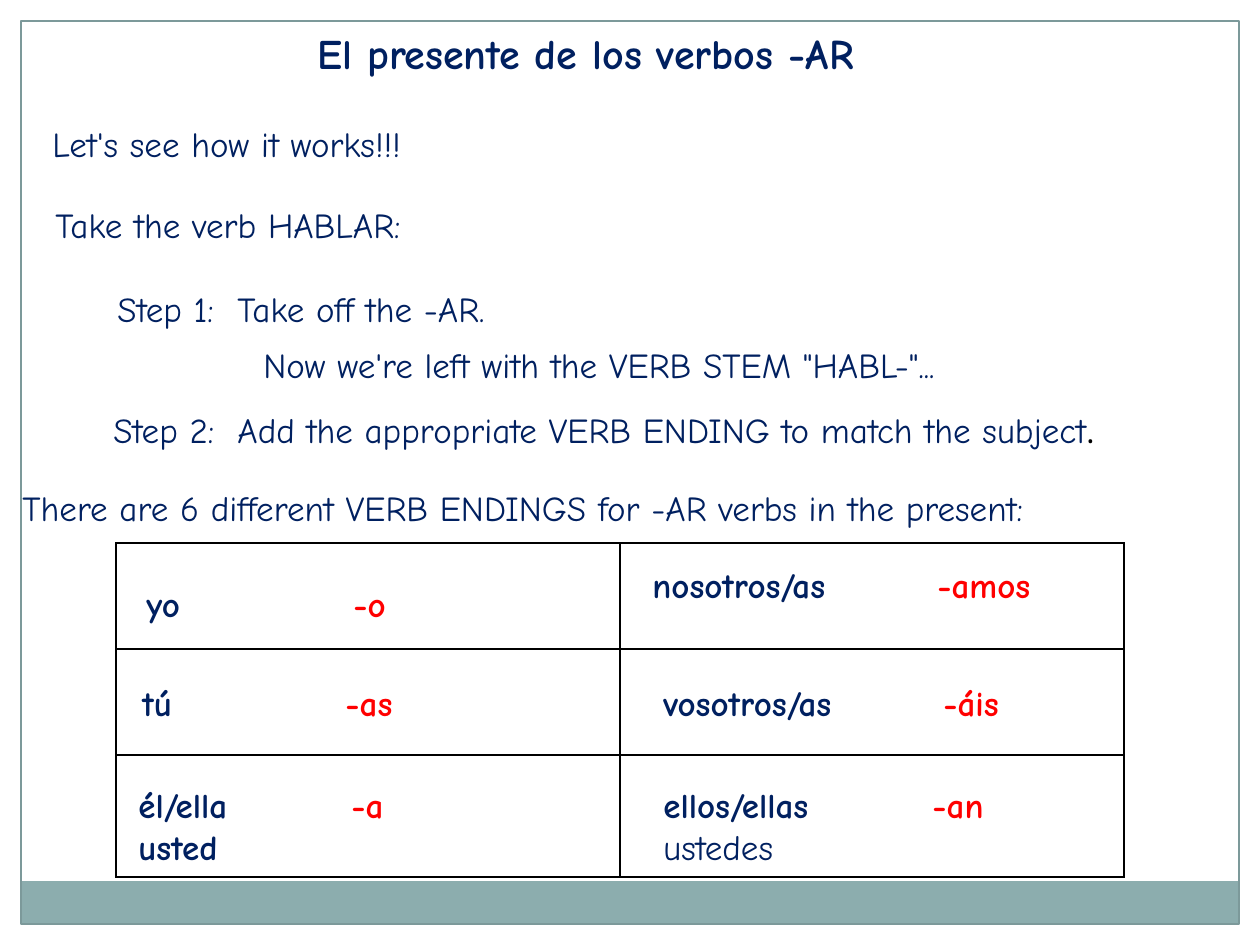
import pptx
import pptx.dml.color
import pptx.enum.shapes
import pptx.enum.text
import pptx.oxml
import pptx.oxml.ns
import pptx.util
from lxml import etree

EMU_PER_PX = 914400 / 126
INSET = 13
COLORS = {
    "white": "FFFFFF",
    "band": "8CADAE",
    "frame": "7C999A",
    "navy": "002060",
    "red": "FF0000",
    "black": "000000",
}


def px(n):
    return pptx.util.Emu(round(n * EMU_PER_PX))


def rgb(name):
    return pptx.dml.color.RGBColor.from_string(COLORS[name])


def add_run(p, text, size=20, color="navy", bold=False, font="Comic Neue"):
    r = p.add_run()
    r.text = text
    r.font.size = pptx.util.Pt(size)
    r.font.bold = bold
    r.font.name = font
    r.font.color.rgb = rgb(color)
    return r


class Deck:
    def __init__(self, width, height):
        self.prs = pptx.Presentation()
        self.prs.slide_width = px(width)
        self.prs.slide_height = px(height)
        self.slide = self.prs.slides.add_slide(self.prs.slide_layouts[6])

    def rect(self, x, y, w, h, fill=None, line=None):
        sp = self.slide.shapes.add_shape(
            pptx.enum.shapes.MSO_SHAPE.RECTANGLE, px(x), px(y), px(w), px(h))
        sp.shadow.inherit = False
        if fill:
            sp.fill.solid()
            sp.fill.fore_color.rgb = rgb(fill)
        else:
            sp.fill.background()
        if line:
            sp.line.color.rgb = rgb(line)
            sp.line.width = pptx.util.Pt(0.75)
        else:
            sp.line.fill.background()

    def text(self, x, y, w, h, text, tab_x=None, **style):
        tf = self.slide.shapes.add_textbox(px(x), px(y), px(w), px(h)).text_frame
        tf.word_wrap = True
        tf.auto_size = pptx.enum.text.MSO_AUTO_SIZE.SHAPE_TO_FIT_TEXT
        p = tf.paragraphs[0]
        if tab_x:
            tabs = etree.SubElement(p._p.get_or_add_pPr(), pptx.oxml.ns.qn("a:tabLst"))
            etree.SubElement(tabs, pptx.oxml.ns.qn("a:tab"),
                             pos=str(px(tab_x - x - INSET)), algn="l")
        add_run(p, text, **style)
        return tf

    def grid(self, x, y, col_widths, row_heights):
        table = self.slide.shapes.add_table(
            len(row_heights), len(col_widths), px(x), px(y),
            px(sum(col_widths)), px(sum(row_heights))).table
        for col, w in zip(table.columns, col_widths):
            col.width = px(w)
        for row, h in zip(table.rows, row_heights):
            row.height = px(h)
        for cell in table.iter_cells():
            self.borders(cell)
            cell.fill.background()

    def borders(self, cell):
        tcPr = cell._tc.get_or_add_tcPr()
        for side in ("lnL", "lnR", "lnT", "lnB"):
            ln = etree.SubElement(tcPr, pptx.oxml.ns.qn("a:" + side),
                                  w=str(pptx.util.Pt(1)))
            fill = etree.SubElement(ln, pptx.oxml.ns.qn("a:solidFill"))
            etree.SubElement(fill, pptx.oxml.ns.qn("a:srgbClr"), val=COLORS["black"])

    def verb(self, x, y, w, h, subject, ending, ending_x, second=None, second_bold=True):
        tf = self.text(x, y, w, h, subject, tab_x=ending_x, bold=True)
        add_run(tf.paragraphs[0], "\t" + ending, color="red", bold=True)
        if second:
            add_run(tf.add_paragraph(), second, bold=second_bold)


def main():
    deck = Deck(1260, 945)
    for box in ((0, 0, 1260, 21), (1239, 0, 21, 945), (0, 0, 21, 945)):
        deck.rect(*box, fill="white")
    deck.rect(21, 881, 1217, 43, fill="band")
    deck.rect(21, 21, 1218, 903, line="frame")

    deck.grid(116, 543, (504, 504), (106, 106, 122))

    deck.text(305, 21, 651, 63, "El presente de los verbos -AR", size=24, bold=True)
    deck.text(40, 116, 421, 55, "Let's see how it works!!!")
    deck.text(43, 197, 422, 55, "Take the verb HABLAR:")
    deck.text(105, 281, 459, 55, "Step 1:\tTake off the -AR.", tab_x=238)
    deck.text(251, 337, 813, 55, "Now we're left with the VERB STEM \"HABL-\"...")
    step = deck.text(101, 402, 1128, 55,
                     "Step 2:\tAdd the appropriate VERB ENDING to match the subject",
                     tab_x=238)
    add_run(step.paragraphs[0], ".", color="black", font="Cambria")
    deck.text(10, 480, 1260, 55,
              "There are 6 different VERB ENDINGS for -AR verbs in the present:")

    deck.verb(134, 576, 318, 55, "yo", "-o", 354)
    deck.verb(130, 675, 333, 55, "tú", "-as", 346)
    deck.verb(126, 777, 325, 97, "él/ella", "-a", 352, second="usted")
    deck.verb(640, 557, 465, 55, "nosotros/as", "-amos", 938)
    deck.verb(651, 675, 427, 55, "vosotros/as", "-áis", 944)
    deck.verb(651, 777, 407, 97, "ellos/ellas", "-an", 933,
              second="ustedes", second_bold=False)

    deck.prs.save("out.pptx")


if __name__ == "__main__":
    main()
